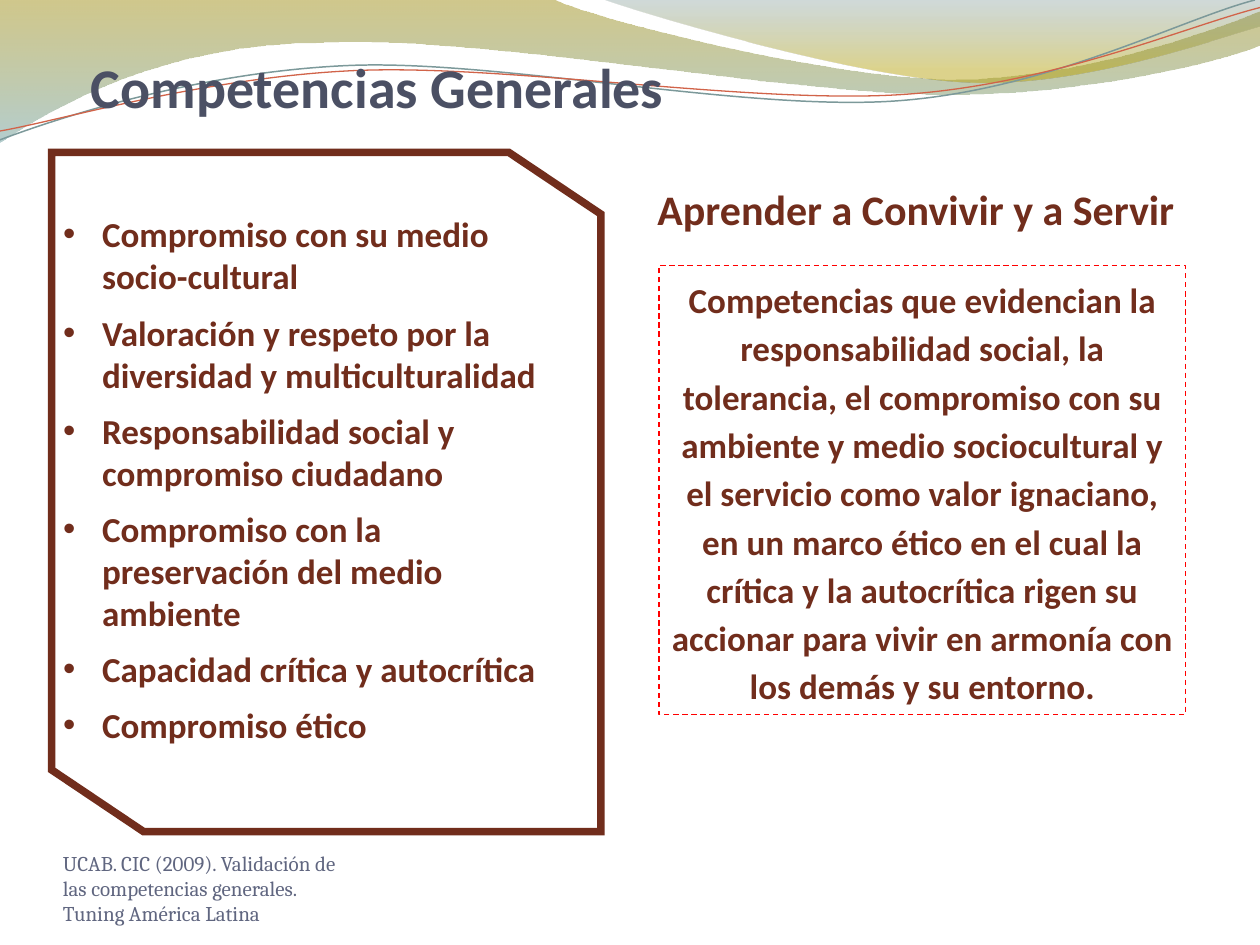
import pptx
import pptx.util
import pptx.dml.color
import pptx.enum.dml
import pptx.enum.text
import pptx.oxml
import pptx.oxml.ns
from dataclasses import dataclass
from lxml import etree

Inches, Pt = pptx.util.Inches, pptx.util.Pt
qn = pptx.oxml.ns.qn
Align, Anchor = pptx.enum.text.PP_ALIGN, pptx.enum.text.MSO_ANCHOR


@dataclass(frozen=True)
class Theme:
    sans: str = "Calibri"
    serif: str = "Cambria"
    brown: str = "712D1C"
    slate: str = "4B5064"
    grey: str = "606680"
    white: str = "FFFFFF"
    red: str = "FF0000"
    teal: str = "7C999A"
    rust: str = "D16349"
    olive: tuple = ((0, "978500", 45), (1, "77A5A6", 55))
    gold: tuple = ((0, "648484", 30), (0.8, "B49F00", 45))
    title: int = 32
    head: int = 24
    body: int = 20
    note: int = 12


THEME = Theme()

SKILLS = [
    "Compromiso con su medio socio-cultural",
    "Valoración y respeto por la diversidad y multiculturalidad",
    "Responsabilidad social y compromiso ciudadano",
    "Compromiso con la preservación del medio ambiente",
    "Capacidad crítica y autocrítica",
    "Compromiso ético",
]
ABOUT = (
    "Competencias que evidencian la responsabilidad social, la tolerancia, "
    "el compromiso con su ambiente y medio sociocultural y el servicio como "
    "valor ignaciano, en un marco ético en el cual la crítica y la autocrítica "
    "rigen su accionar para vivir en armonía con los demás y su entorno."
)
SOURCE = ("UCAB. CIC (2009). Validación de las competencias generales. "
          "Tuning América Latina")


def rgb(code):
    return pptx.dml.color.RGBColor.from_string(code)


def place(shape, box):
    """Move a shape to a box and bring it to the front."""
    shape.left, shape.top, shape.width, shape.height = map(Inches, box)
    shape.element.getparent().append(shape.element)
    return shape


def write(shape, lines, size, color, font=THEME.sans, bold=True, align=Align.LEFT,
          anchor=Anchor.TOP, inset=(0.1, 0.05), gap=0, pitch=1, bullet=None):
    frame = shape.text_frame
    frame.word_wrap = True
    frame.auto_size = pptx.enum.text.MSO_AUTO_SIZE.NONE
    frame.vertical_anchor = anchor
    frame.margin_left = frame.margin_right = Inches(inset[0])
    frame.margin_top = frame.margin_bottom = Inches(inset[1])
    for i, line in enumerate(lines):
        para = frame.paragraphs[0] if i == 0 else frame.add_paragraph()
        para.text = line
        para.alignment, para.line_spacing = align, pitch
        para.space_before, para.space_after = Pt(gap if i else 0), Pt(gap)
        props = para._p.get_or_add_pPr()
        hang = Inches(0.31) if bullet else 0
        props.set("marL", str(hang))
        props.set("indent", str(-hang))
        if bullet:
            etree.SubElement(props, qn("a:buFont")).set("typeface", "Arial")
            etree.SubElement(props, qn("a:buChar")).set("char", bullet)
        else:
            etree.SubElement(props, qn("a:buNone"))
        para.font.name, para.font.size, para.font.bold = font, Pt(size), bold
        para.font.color.rgb = rgb(color)


def draw(slide, box, start, steps, close=True):
    """Draw an outline: a step of two numbers is a line, of six a Bézier curve."""
    x, y = box[:2]
    flat = [*start, *(n for step in steps for n in step)]
    points = [(Inches(x + a), Inches(y + b)) for a, b in zip(flat[::2], flat[1::2])]
    pen = slide.shapes.build_freeform(*points[0])
    pen.add_line_segments(points[1:], close=close)
    shape = pen.convert_to_shape()
    shape.shadow.inherit = False
    marks = iter(list(shape.element.iter(qn("a:lnTo"))))
    for step in steps:
        mark = next(marks)
        if len(step) == 6:
            curve = etree.Element(qn("a:cubicBezTo"))
            mark.addprevious(curve)
            for part in (mark, next(marks), next(marks)):
                curve.append(part[0])
                part.getparent().remove(part)
    return shape


def shade(shape, stops):
    shape.line.fill.background()
    shape.fill.gradient()
    shape.fill.gradient_angle = 270
    for stop, (spot, color, _) in zip(shape.fill.gradient_stops, stops):
        stop.position, stop.color.rgb = spot, rgb(color)
    grad = shape.element.spPr.find(qn("a:gradFill"))
    for node, (_, _, alpha) in zip(grad.iter(qn("a:srgbClr")), stops):
        etree.SubElement(node, qn("a:alpha")).set("val", str(alpha * 1000))


def stroke(shape, color, width):
    shape.line.color.rgb, shape.line.width = rgb(color), Pt(width)


def waves(slide, box):
    green = draw(slide, box, (0, 0), [
        (4.4, 0), (4.76, 0.17, 6.64, 0.63, 7.58, 0.63),
        (8.53, 0.63, 9.58, 0.26, 10, 0.09), (10, 0.36),
        (9.83, 0.44, 8.7, 0.76, 7.46, 0.75), (6.22, 0.75, 3.82, 0.28, 2.57, 0.34),
        (1.29, 0.35, 0.46, 0.83, 0, 1.13)])
    shade(green, THEME.olive)
    gold = draw(slide, box, (4.79, 0), [
        (5.09, 0.11, 6.82, 0.62, 7.69, 0.65), (8.56, 0.69, 9.61, 0.32, 10, 0.21),
        (10, 0)])
    shade(gold, THEME.gold)
    threads = [
        (THEME.teal, 0.85, (0, 1.11), [
            (0.48, 0.93, 1.58, 0.57, 2.77, 0.52), (3.95, 0.47, 5.93, 0.89, 7.13, 0.8),
            (8.33, 0.71, 9.38, 0.15, 9.96, 0)]),
        (THEME.rust, 0.75, (0, 1.04), [
            (0.47, 0.96, 1.64, 0.61, 2.83, 0.56), (4.03, 0.51, 5.97, 0.83, 7.17, 0.75),
            (8.36, 0.67, 9.41, 0.21, 10, 0.06)]),
    ]
    for color, width, start, steps in threads:
        line = draw(slide, box, start, steps, close=False)
        line.fill.background()
        stroke(line, color, width)


def skills(slide, holder, box):
    """Place the bulleted list in a frame with two cut corners."""
    x, y, w, h = box
    dx, dy = 0.73, 0.49
    frame = draw(slide, box, (0, 0), [
        (w - dx, 0), (w, dy), (w, h), (dx, h), (0, h - dy)])
    frame.fill.solid()
    frame.fill.fore_color.rgb = rgb(THEME.white)
    stroke(frame, THEME.brown, 4.33)
    etree.SubElement(frame.line._ln, qn("a:miter")).set("lim", "800000")
    place(holder, (x - 0.01, y + 0.43, w - 0.28, h - 1.03))
    write(holder, SKILLS, THEME.body, THEME.brown, gap=4, bullet="•")


def about(slide, holder, box):
    """Place the heading above the dashed description."""
    x, y, w, h = box
    place(holder, (x + 0.46, y + 0.7, w - 0.82, h - 0.7))
    write(holder, [ABOUT], THEME.body, THEME.brown, align=Align.CENTER, pitch=1.15)
    stroke(holder, THEME.red, 0.75)
    holder.line.dash_style = pptx.enum.dml.MSO_LINE.DASH
    head = slide.shapes.add_textbox(*map(Inches, (x, y, w, 0.51)))
    write(head, ["Aprender a Convivir y a Servir"], THEME.head, THEME.brown,
          align=Align.CENTER)


def credit(slide, box):
    note = slide.shapes.add_textbox(*map(Inches, box))
    write(note, [SOURCE], THEME.note, THEME.grey, font=THEME.serif, bold=False,
          anchor=Anchor.BOTTOM, inset=(0, 0))


def main():
    deck = pptx.Presentation()
    deck.slide_width, deck.slide_height = Inches(10), Inches(7.5)
    slide = deck.slides.add_slide(deck.slide_layouts[3])
    title, left, right = slide.placeholders
    waves(slide, (0, 0, 10, 1.13))
    credit(slide, (0.5, 6.95, 2.33, 0.4))
    place(title, (0.62, 0.37, 8.05, 0.64))
    write(title, ["Competencias Generales"], THEME.title, THEME.slate)
    skills(slide, left, (0.41, 1.21, 4.36, 5.39))
    about(slide, right, (4.77, 1.41, 5, 4.26))
    deck.save("out.pptx")


if __name__ == "__main__":
    main()
